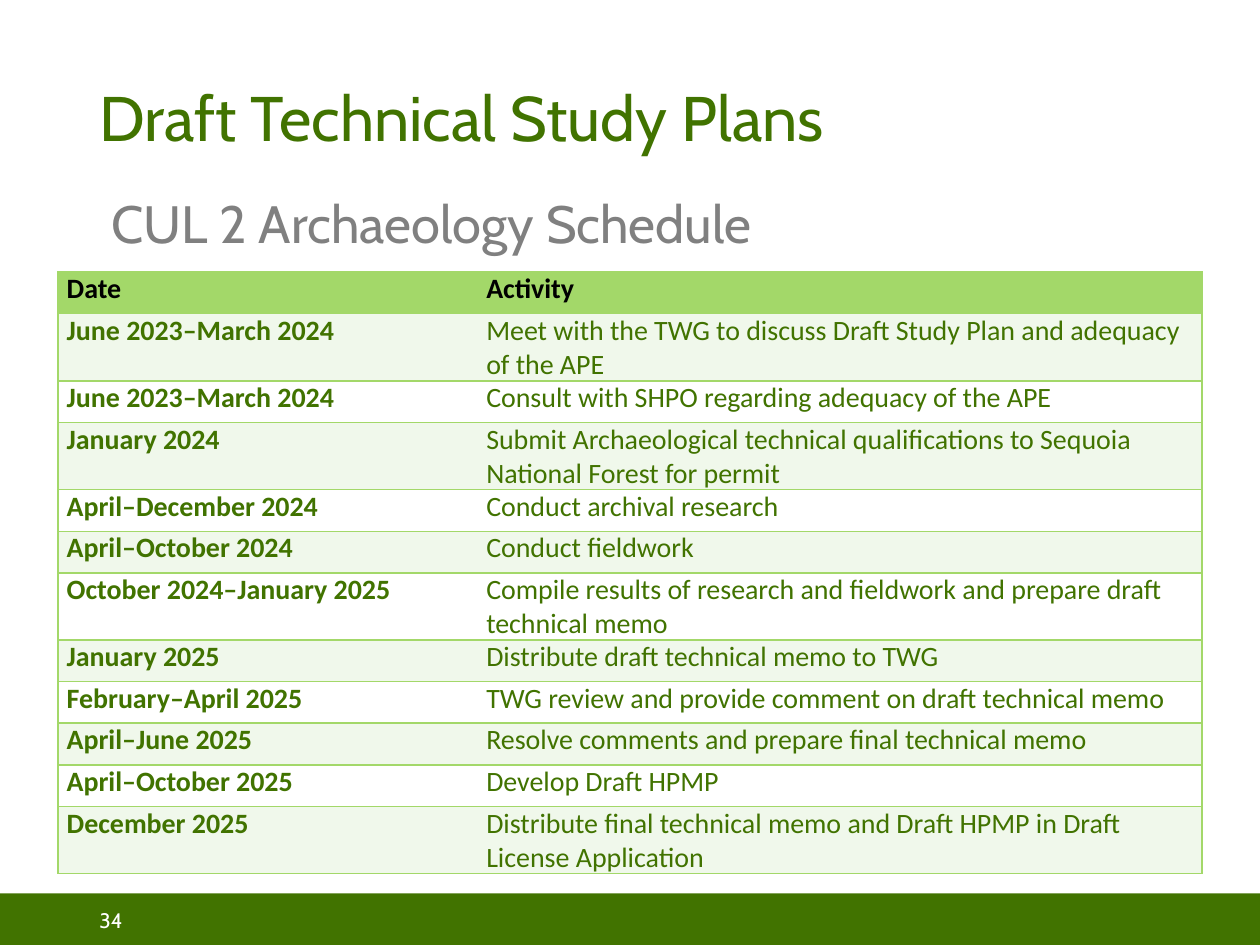
"""Build the CUL 2 Archaeology schedule slide."""
import pptx
import pptx.dml.color
import pptx.enum.shapes
import pptx.enum.text
import pptx.oxml
import pptx.oxml.ns
import pptx.util

Pt = pptx.util.Pt
GREEN, LIME, PALE, WHITE, GREY, BLACK = "417300", "A3D869", "F0F8EB", "FFFFFF", "808080", "000000"
TITLE = "Draft Technical Study Plans"
SUBTITLE = " CUL 2 Archaeology Schedule"
PAGE = "34"
SCHEDULE = [
    ("Date", "Activity"),
    ("June 2023–March 2024", "Meet with the TWG to discuss Draft Study Plan and adequacy of the APE"),
    ("June 2023–March 2024", "Consult with SHPO regarding adequacy of the APE"),
    ("January 2024", "Submit Archaeological technical qualifications to Sequoia National Forest for permit"),
    ("April–December 2024", "Conduct archival research"),
    ("April–October 2024", "Conduct fieldwork"),
    ("October 2024–January 2025", "Compile results of research and fieldwork and prepare draft technical memo"),
    ("January 2025", "Distribute draft technical memo to TWG"),
    ("February–April 2025", "TWG review and provide comment on draft technical memo"),
    ("April–June 2025", "Resolve comments and prepare final technical memo"),
    ("April–October 2025", "Develop Draft HPMP"),
    ("December 2025", "Distribute final technical memo and Draft HPMP in Draft License Application"),
]
COLUMNS = (239.76, 414)
ROW_HEIGHT = 23.76


def rgb(color):
    return pptx.dml.color.RGBColor.from_string(color)


def style(p, text, font, size, color, bold=False):
    p.text = text
    p.font.name, p.font.size, p.font.bold = font, Pt(size), bold
    p.font.color.rgb = rgb(color)


def add_text(s, box, text, size, color, spacing=1.0, middle=True):
    tf = s.shapes.add_textbox(*map(Pt, box)).text_frame
    tf.word_wrap = True
    anchor = pptx.enum.text.MSO_ANCHOR
    tf.vertical_anchor = anchor.MIDDLE if middle else anchor.TOP
    p = tf.paragraphs[0]
    p.line_spacing = spacing
    style(p, text, "Cabin", size, color)


def add_borders(cell, hidden):
    for side in "LRTB":
        if side == hidden:
            line = "<a:noFill/>"
        else:
            line = f'<a:solidFill><a:srgbClr val="{LIME}"/></a:solidFill>'
        cell._tc.get_or_add_tcPr().append(pptx.oxml.parse_xml(
            f'<a:ln{side} {pptx.oxml.ns.nsdecls("a")} w="{Pt(1)}">{line}</a:ln{side}>'))


def add_schedule(s):
    table = s.shapes.add_table(len(SCHEDULE), len(COLUMNS), Pt(33.12), Pt(155.52),
                               Pt(sum(COLUMNS)), Pt(ROW_HEIGHT * len(SCHEDULE))).table
    for column, width in zip(table.columns, COLUMNS):
        column.width = Pt(width)
    for i, texts in enumerate(SCHEDULE):
        table.rows[i].height = Pt(ROW_HEIGHT)
        fill = LIME if i == 0 else PALE if i % 2 else WHITE
        for j, text in enumerate(texts):
            cell = table.cell(i, j)
            cell.margin_left = cell.margin_right = Pt(5.04)
            cell.margin_top = cell.margin_bottom = Pt(0)
            add_borders(cell, "R" if j == 0 else "L")
            cell.fill.solid()
            cell.fill.fore_color.rgb = rgb(fill)
            p = cell.text_frame.paragraphs[0]
            p.space_after = Pt(3)
            style(p, text, "Calibri", 16, GREEN if i else BLACK, i == 0 or j == 0)


def main():
    prs = pptx.Presentation()
    prs.slide_width, prs.slide_height = Pt(720), Pt(540)
    s = prs.slides.add_slide(prs.slide_layouts[6])
    footer = s.shapes.add_shape(pptx.enum.shapes.MSO_SHAPE.RECTANGLE,
                                Pt(0), Pt(510.48), Pt(720), Pt(29.52))
    footer.shadow.inherit = False
    footer.fill.solid()
    footer.fill.fore_color.rgb = rgb(GREEN)
    footer.line.fill.background()
    add_text(s, (49.68, 102.24, 620.64, 384.48), SUBTITLE, 30, GREY, 1.1, False)
    add_text(s, (49.68, 511.2, 162, 28.8), PAGE, 12, WHITE)
    add_text(s, (49.68, 36, 620.64, 66.24), TITLE, 36, GREEN, 0.9)
    add_schedule(s)
    prs.save("out.pptx")


if __name__ == "__main__":
    main()
